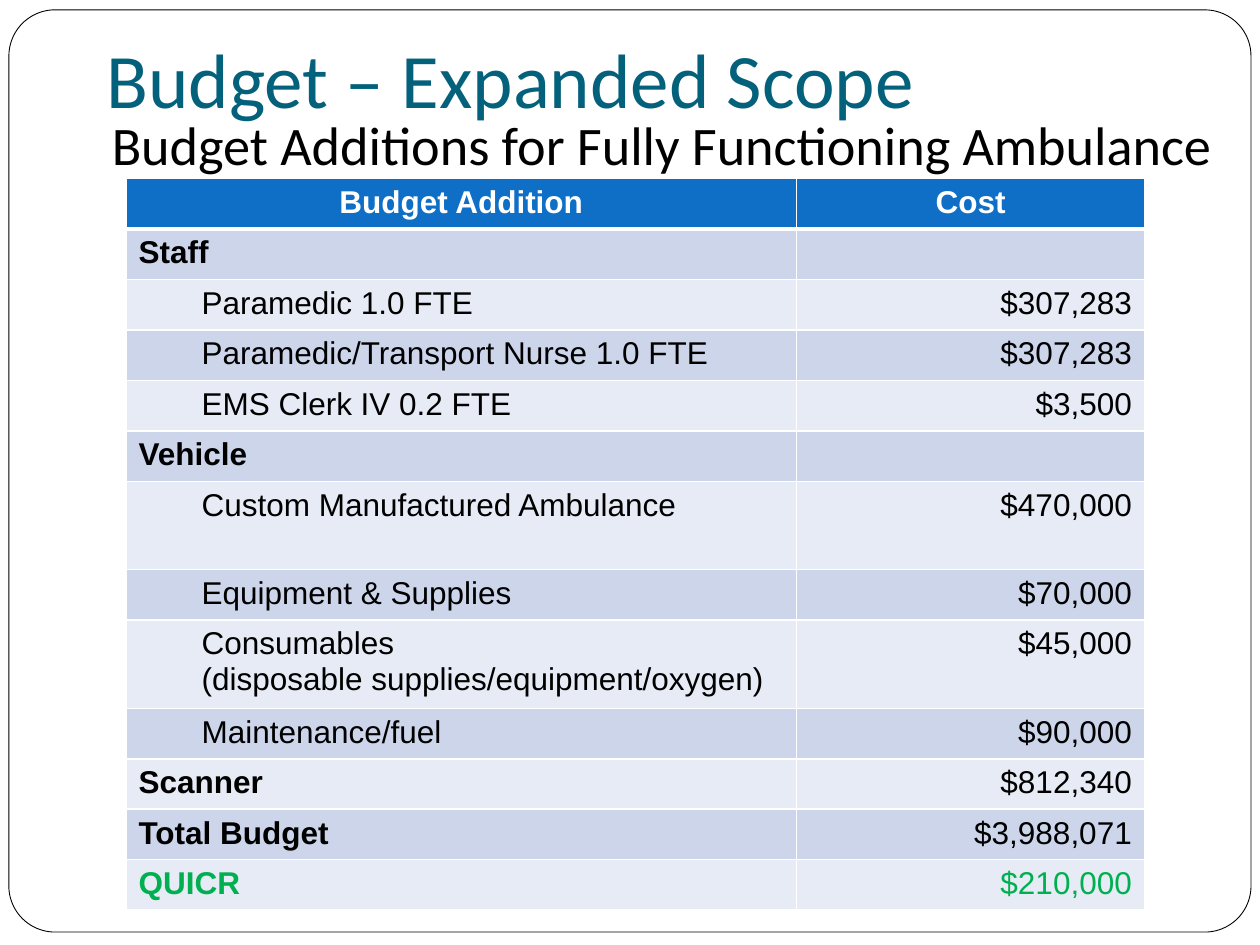
from dataclasses import dataclass

from pptx import Presentation
from pptx.dml.color import RGBColor
from pptx.enum.shapes import MSO_SHAPE
from pptx.enum.text import MSO_ANCHOR, PP_ALIGN
from pptx.oxml import parse_xml
from pptx.oxml.ns import nsdecls
from pptx.util import Cm, Pt

LEFT, CENTER, RIGHT = PP_ALIGN.LEFT, PP_ALIGN.CENTER, PP_ALIGN.RIGHT
TOP, BOTTOM = MSO_ANCHOR.TOP, MSO_ANCHOR.BOTTOM
ROUNDED_RECTANGLE = MSO_SHAPE.ROUNDED_RECTANGLE

WHITE = RGBColor(0xFF, 0xFF, 0xFF)
BLACK = RGBColor(0x00, 0x00, 0x00)
TEAL = RGBColor(0x04, 0x61, 0x7B)
BLUE = RGBColor(0x0F, 0x6F, 0xC6)
GREEN = RGBColor(0x00, 0xB0, 0x50)
BANDS = (RGBColor(0xCC, 0xD5, 0xEA), RGBColor(0xE7, 0xEB, 0xF5))

HEADING_LEFT = Cm(1.9)
TABLE_LEFT, TABLE_TOP = Cm(2.54), Cm(3.6)
COLUMN_WIDTHS = (Cm(13.52), Cm(7.01))
ROW_HEIGHT, TALL_ROW_HEIGHT = Cm(1.01), Cm(1.78)
ITEM_INDENT = Cm(1.27)


@dataclass
class BudgetRow:
    label: str
    cost: str = ""
    height: int = ROW_HEIGHT
    color: RGBColor = BLACK
    bold: bool = False
    indent: int = 0


def category(label, cost="", color=BLACK):
    return BudgetRow(label, cost, color=color, bold=True)


def item(label, cost, height=ROW_HEIGHT):
    return BudgetRow(label, cost, height=height, indent=ITEM_INDENT)


HEADER = ("Budget Addition", "Cost")
BUDGET = (
    category("Staff"),
    item("Paramedic 1.0 FTE", "$307,283"),
    item("Paramedic/Transport Nurse 1.0 FTE", "$307,283"),
    item("EMS Clerk IV 0.2 FTE", "$3,500"),
    category("Vehicle"),
    item("Custom Manufactured Ambulance", "$470,000", TALL_ROW_HEIGHT),
    item("Equipment & Supplies", "$70,000"),
    item("Consumables\v(disposable supplies/equipment/oxygen)", "$45,000",
         TALL_ROW_HEIGHT),
    item("Maintenance/fuel", "$90,000"),
    category("Scanner", "$812,340"),
    category("Total Budget", "$3,988,071"),
    category("QUICR", "$210,000", GREEN),
)


def write_text(text_frame, text, *, size=18, font="Arial", color=BLACK,
               bold=False, align=LEFT, indent=0):
    paragraph = text_frame.paragraphs[0]
    paragraph.text = text
    paragraph.alignment = align
    if indent:
        paragraph._p.get_or_add_pPr().set("marL", str(indent))
    for run in paragraph.runs:
        run.font.size = Pt(size)
        run.font.name = font
        run.font.bold = bold
        run.font.color.rgb = color


def add_frame(slide):
    frame = slide.shapes.add_shape(
        ROUNDED_RECTANGLE, Cm(0.18), Cm(0.2), Cm(25.04), Cm(18.59))
    frame.adjustments[0] = 0.05
    frame.shadow.inherit = False
    frame.fill.solid()
    frame.fill.fore_color.rgb = WHITE
    frame.line.color.rgb = BLACK
    frame.line.width = Pt(0.5)


def add_heading(slide, text, top, width, height, *, anchor=TOP,
                bottom_inset=Cm(0.13), **text_format):
    text_box = slide.shapes.add_textbox(HEADING_LEFT, top, width, height)
    text_frame = text_box.text_frame
    text_frame.word_wrap = True
    text_frame.vertical_anchor = anchor
    text_frame.margin_bottom = bottom_inset
    write_text(text_frame, text, font="Calibri", **text_format)


def fill_cell(cell, text, background, **text_format):
    cell.fill.solid()
    cell.fill.fore_color.rgb = background
    write_text(cell.text_frame, text, **text_format)


def underline_cell(cell, color, width):
    """Draw the bottom border of a table cell."""
    border = parse_xml(
        f'<a:lnB {nsdecls("a")} w="{width}"><a:solidFill>'
        f'<a:srgbClr val="{color}"/></a:solidFill></a:lnB>')
    cell._tc.get_or_add_tcPr().insert(0, border)


def add_budget_table(slide):
    row_heights = [ROW_HEIGHT] + [row.height for row in BUDGET]
    table = slide.shapes.add_table(
        len(row_heights), len(COLUMN_WIDTHS), TABLE_LEFT, TABLE_TOP,
        sum(COLUMN_WIDTHS), sum(row_heights)).table
    for column, width in zip(table.columns, COLUMN_WIDTHS):
        column.width = width
    for table_row, height in zip(table.rows, row_heights):
        table_row.height = height

    for column_index, title in enumerate(HEADER):
        cell = table.cell(0, column_index)
        fill_cell(cell, title, BLUE, color=WHITE, bold=True, align=CENTER)
        underline_cell(cell, WHITE, Pt(3))

    for index, row in enumerate(BUDGET):
        band = BANDS[index % len(BANDS)]
        fill_cell(table.cell(index + 1, 0), row.label, band,
                  color=row.color, bold=row.bold, indent=row.indent)
        fill_cell(table.cell(index + 1, 1), row.cost, band,
                  color=row.color, align=RIGHT)


def main():
    presentation = Presentation()
    presentation.slide_width, presentation.slide_height = Cm(25.4), Cm(19.05)
    slide = presentation.slides.add_slide(presentation.slide_layouts[6])
    add_frame(slide)
    add_heading(slide, "Budget – Expanded Scope",
                Cm(-0.43), Cm(21.59), Cm(3.18),
                anchor=BOTTOM, bottom_inset=Cm(0.25), size=44, color=TEAL)
    add_heading(slide, "Budget Additions for Fully Functioning Ambulance",
                Cm(2.11), Cm(22.86), Cm(15.24), size=31, align=CENTER)
    add_budget_table(slide)
    presentation.save("out.pptx")


if __name__ == "__main__":
    main()
